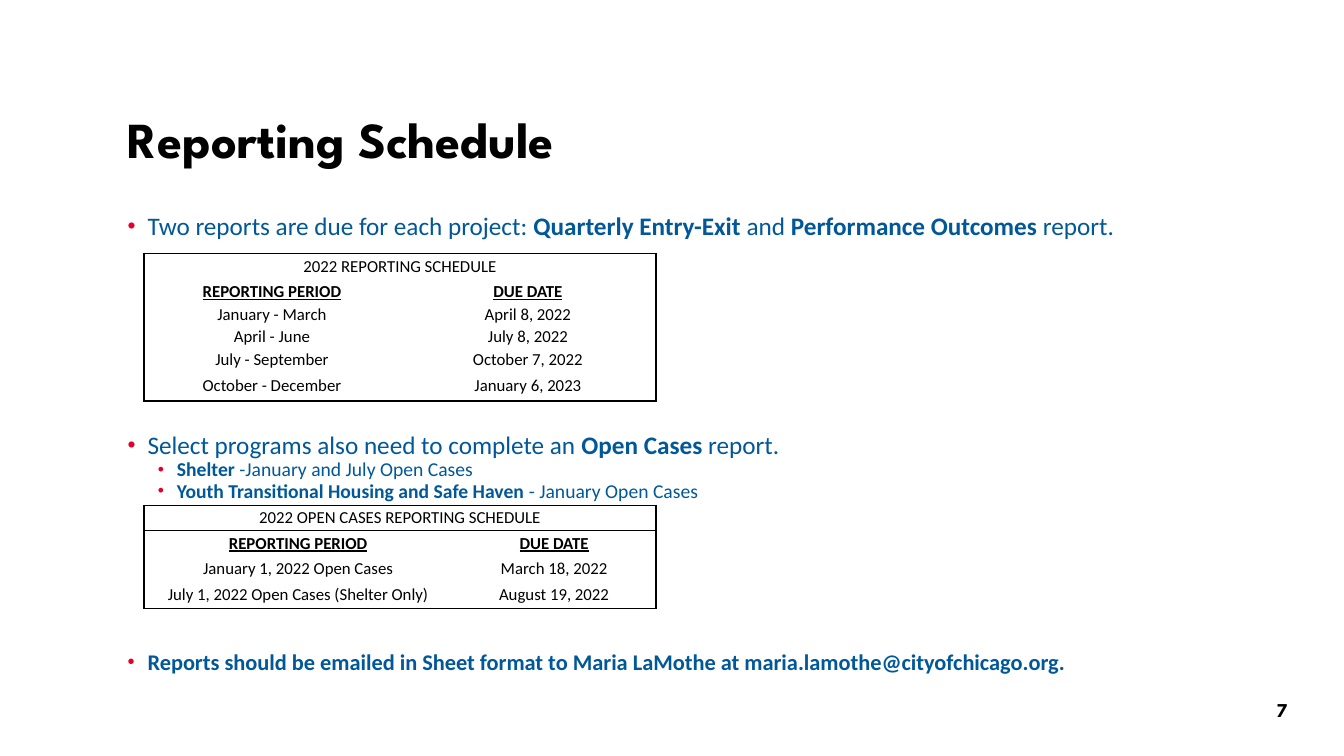
"""Build the Reporting Schedule slide with its two due-date tables."""
from lxml import etree
from pptx import Presentation
from pptx.dml.color import RGBColor
from pptx.enum.text import MSO_ANCHOR, PP_ALIGN
from pptx.oxml import parse_xml
from pptx.oxml.ns import nsdecls, qn
from pptx.util import Cm, Pt

BLACK = RGBColor(0x00, 0x00, 0x00)
WHITE = RGBColor(0xFF, 0xFF, 0xFF)
BLUE = RGBColor(0x00, 0x58, 0x99)
RED = RGBColor(0xE4, 0x00, 0x2B)


def style(paragraph, face, size, color, bold=None):
    font = paragraph.font
    font.name, font.size, font.bold = face, Pt(size), bold
    font.color.rgb = color


def add_border(cell, side, visible):
    paint = f'<a:solidFill><a:srgbClr val="{BLACK}"/></a:solidFill>' if visible else "<a:noFill/>"
    cell._tc.get_or_add_tcPr().append(
        parse_xml(f'<a:ln{side} {nsdecls("a")} w="12700">{paint}</a:ln{side}>'))


deck = Presentation()
deck.slide_width, deck.slide_height = Cm(33.87), Cm(19.05)
slide = deck.slides.add_slide(deck.slide_layouts[6])

headings = [
    ("Reporting Schedule", (2.97, 1.35, 27.94, 4.47), 36, PP_ALIGN.LEFT),
    ("7", (31.42, 17.42, 1.78, 1.02), 14, PP_ALIGN.CENTER),
]
for wording, place, size, alignment in headings:
    frame = slide.shapes.add_textbox(*map(Cm, place)).text_frame
    frame.word_wrap = True
    frame.vertical_anchor = MSO_ANCHOR.MIDDLE
    heading = frame.paragraphs[0]
    heading.text = wording
    heading.alignment = alignment
    heading.line_spacing = 0.9
    style(heading, "League Spartan", size, BLACK, True)

instructions = [
    (0, 18, 0, [("Two reports are due for each project: ", False), ("Quarterly Entry-Exit", True),
                (" and ", False), ("Performance Outcomes", True), (" report.", False)]),
    (0, 18, 137, [("Select programs also need to complete an ", False),
                  ("Open Cases ", True), ("report.", False)]),
    (1, 14, 0, [("Shelter", True), (" -January and July Open Cases", False)]),
    (1, 14, 0, [("Youth Transitional Housing and Safe Haven ", True),
                ("- January Open Cases", False)]),
    (0, 16, 106, [("Reports should be emailed in Sheet format to Maria LaMothe at "
                   "maria.lamothe@cityofchicago.org.", True)]),
]
body = slide.shapes.add_textbox(Cm(2.97), Cm(5.26), Cm(29.41), Cm(11.89)).text_frame
body.word_wrap = True
for index, (level, size, gap, pieces) in enumerate(instructions):
    item = body.add_paragraph() if index else body.paragraphs[0]
    item.level = level
    item.line_spacing = 0.9
    item.space_before = Pt(gap)
    properties = item._p.get_or_add_pPr()
    properties.set("marL", str(Cm(1.24 if level else 0.5)))
    properties.set("indent", str(-Cm(0.48 if level else 0.5)))
    bullet_color = etree.SubElement(properties, qn("a:buClr"))
    etree.SubElement(bullet_color, qn("a:srgbClr"), val=str(RED))
    etree.SubElement(properties, qn("a:buSzPct"), val="90000")
    etree.SubElement(properties, qn("a:buFont"), typeface="Arial")
    etree.SubElement(properties, qn("a:buChar"), char="•")
    style(item, "Calibri", size, BLUE)
    for wording, bold in pieces:
        run = item.add_run()
        run.text = wording
        run.font.bold = bold

COLUMN_TITLES = ("REPORTING PERIOD", "DUE DATE")
schedules = [
    (6.38, (6.45, 6.45), (0.69, 0.57, 0.57, 0.57, 0.57, 0.76), False,
     [("2022 REPORTING SCHEDULE", ""), COLUMN_TITLES,
      ("January - March", "April 8, 2022"), ("April - June", "July 8, 2022"),
      ("July - September", "October 7, 2022"), ("October - December", "January 6, 2023")]),
    (12.73, (7.77, 5.13), (0.64, 0.61, 0.69, 0.66), True,
     [("2022 OPEN CASES REPORTING SCHEDULE", ""), COLUMN_TITLES,
      ("January 1, 2022 Open Cases", "March 18, 2022"),
      ("July 1, 2022 Open Cases (Shelter Only)", "August 19, 2022")]),
]
for top, widths, heights, ruled, entries in schedules:
    table = slide.shapes.add_table(len(entries), 2, Cm(3.63), Cm(top),
                                   Cm(sum(widths)), Cm(sum(heights))).table
    table.first_row = table.horz_banding = False
    for column, width in zip(table.columns, widths):
        column.width = Cm(width)
    for row, height in zip(table.rows, heights):
        row.height = Cm(height)
    table.cell(0, 0).merge(table.cell(0, 1))
    last = len(entries) - 1
    for r, entry in enumerate(entries):
        for c, wording in enumerate(entry):
            cell = table.cell(r, c)
            cell.margin_left = cell.margin_right = Cm(0.03)
            cell.margin_top = cell.margin_bottom = Cm(0.03)
            cell.vertical_anchor = MSO_ANCHOR.BOTTOM if r == 1 else MSO_ANCHOR.MIDDLE
            add_border(cell, "L", c == 0)
            add_border(cell, "R", c == 1 or r == 0)
            add_border(cell, "T", r == 0 or (ruled and r == 1))
            add_border(cell, "B", r == last or (ruled and r == 0))
            cell.fill.solid()
            cell.fill.fore_color.rgb = WHITE
            entry_line = cell.text_frame.paragraphs[0]
            entry_line.text = wording
            entry_line.alignment = PP_ALIGN.CENTER
            style(entry_line, "Calibri", 12, BLACK, r == 1)
            entry_line.font.underline = r == 1

deck.save("out.pptx")
